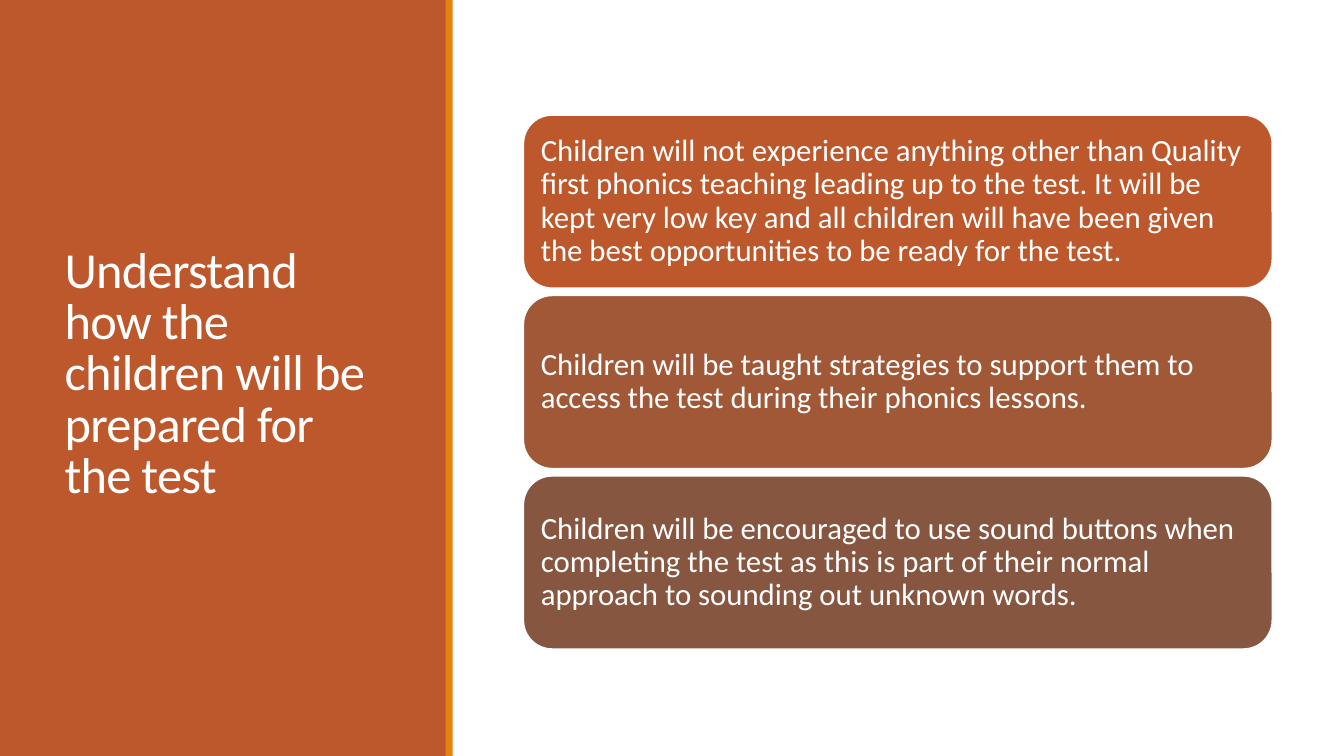
from pptx import Presentation
from pptx.dml.color import RGBColor
from pptx.enum.shapes import MSO_SHAPE
from pptx.enum.text import MSO_ANCHOR, MSO_AUTO_SIZE, PP_ALIGN
from pptx.util import Inches, Pt

RECT = MSO_SHAPE.RECTANGLE
ROUND_RECT = MSO_SHAPE.ROUNDED_RECTANGLE
MIDDLE = MSO_ANCHOR.MIDDLE
LEFT = PP_ALIGN.LEFT
NO_AUTOFIT = MSO_AUTO_SIZE.NONE

WHITE = RGBColor(0xFF, 0xFF, 0xFF)
RUST = RGBColor(0xBD, 0x58, 0x2C)
ORANGE = RGBColor(0xE4, 0x83, 0x12)
SIENNA = RGBColor(0xA0, 0x58, 0x37)
BROWN = RGBColor(0x86, 0x56, 0x40)

FONT = "Calibri"
CARD_TOP, CARD_STEP = 1.14, 1.79
CARDS = [
    (RUST, "Children will not experience anything other than Quality first phonics "
           "teaching leading up to the test. It will be kept very low key and all "
           "children will have been given the best opportunities to be ready for the test."),
    (SIENNA, "Children will be taught strategies to support them to access the test "
             "during their phonics lessons."),
    (BROWN, "Children will be encouraged to use sound buttons when completing the test "
            "as this is part of their normal approach to sounding out unknown words."),
]


def add_block(s, kind, left, top, width, height, fill):
    """Add a filled preset shape without line or shadow."""
    sp = s.shapes.add_shape(kind, Inches(left), Inches(top), Inches(width), Inches(height))
    sp.shadow.inherit = False
    sp.fill.solid()
    sp.fill.fore_color.rgb = fill
    sp.line.fill.background()
    return sp


def set_text(sp, text, size, line_spacing):
    """Write one left-aligned, vertically centred white paragraph."""
    tf = sp.text_frame
    tf.text = text
    tf.word_wrap = True
    tf.auto_size = NO_AUTOFIT
    tf.vertical_anchor = MIDDLE
    p = tf.paragraphs[0]
    p.alignment = LEFT
    p.line_spacing = line_spacing
    p.font.name = FONT
    p.font.size = Pt(size)
    p.font.color.rgb = WHITE
    return p


def place_title(s, text):
    """Place the title placeholder in front of the side panel."""
    sp = s.shapes.title
    sp.left, sp.top = Inches(0.54), Inches(0.57)
    sp.width, sp.height = Inches(3.37), Inches(6.31)
    p = set_text(sp, text, 36, 0.85)
    p.runs[0].font._element.set("spc", "-50")
    s.shapes._spTree.append(sp._element)


def add_card(s, top, fill, text):
    """Add a rounded card with its statement."""
    sp = add_block(s, ROUND_RECT, 5.19, top, 7.43, 1.72, fill)
    sp.line.color.rgb = WHITE
    sp.line.width = Pt(1.25)
    tf = sp.text_frame
    tf.margin_left = tf.margin_right = tf.margin_top = tf.margin_bottom = Inches(0.09)
    set_text(sp, text, 22, 0.9)


def main():
    """Build and save the slide."""
    prs = Presentation()
    prs.slide_width, prs.slide_height = Inches(13.33), Inches(7.5)
    s = prs.slides.add_slide(prs.slide_layouts[5])
    add_block(s, RECT, 0, 0, 4.43, 7.5, RUST)
    place_title(s, "Understand how the children will be prepared for the test")
    add_block(s, RECT, 4.42, 0, 0.07, 7.5, ORANGE)
    for i, (fill, text) in enumerate(CARDS):
        add_card(s, CARD_TOP + i * CARD_STEP, fill, text)
    prs.save("out.pptx")


if __name__ == "__main__":
    main()
